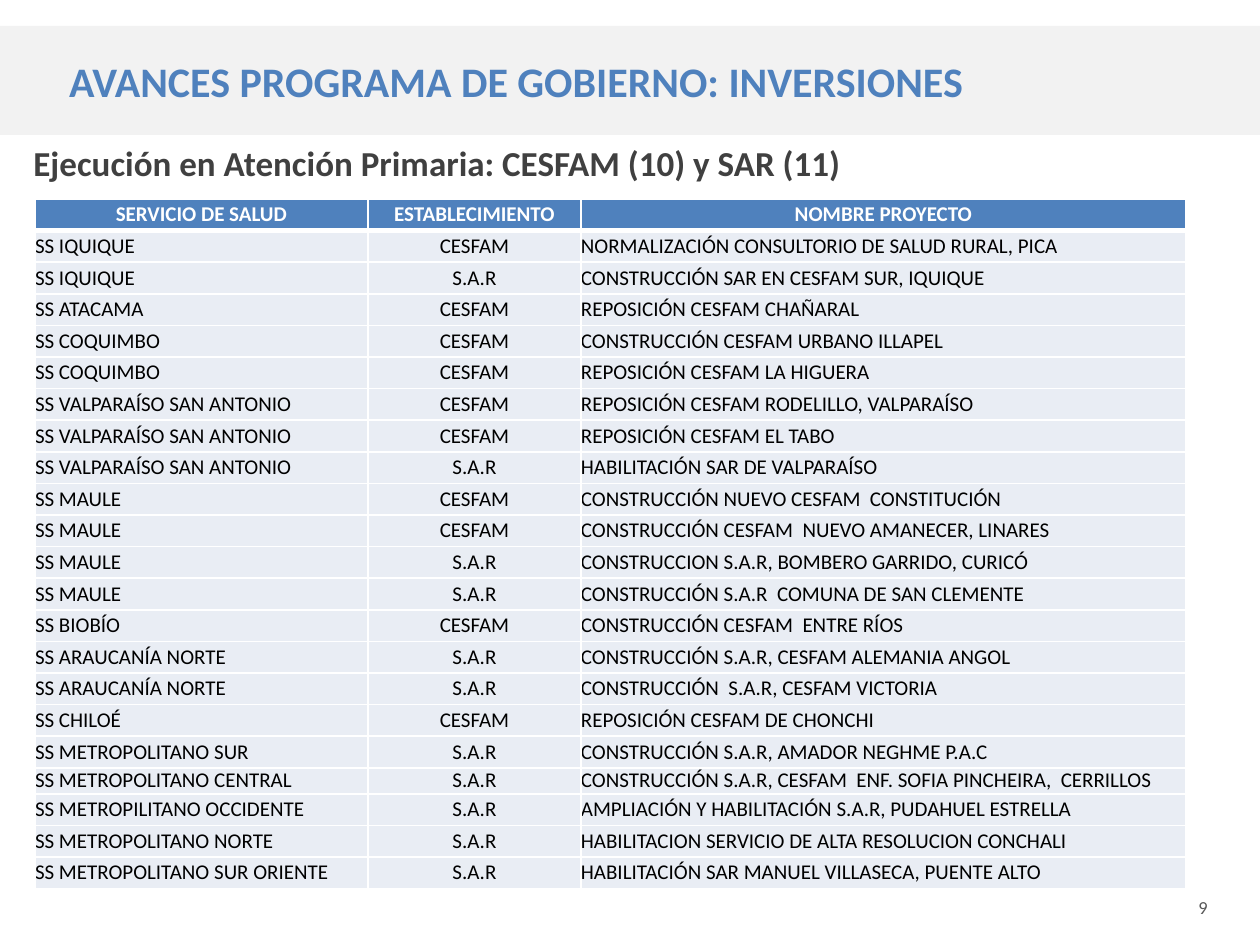
import pptx
import pptx.util
import pptx.dml.color
import pptx.enum.text
import pptx.oxml
import pptx.oxml.ns

SCALE = 914400 / 126
HEX = {
    "band": "F2F2F2", "blue": "4F81BD", "dark": "404040", "gray": "595959",
    "row": "E9EDF4", "black": "000000", "white": "FFFFFF",
}
HEAD = ("SERVICIO DE SALUD", "ESTABLECIMIENTO", "NOMBRE PROYECTO")
WORKS = [
    ("SS IQUIQUE", "CESFAM", "NORMALIZACIÓN CONSULTORIO DE SALUD RURAL, PICA"),
    ("SS IQUIQUE", "S.A.R", "CONSTRUCCIÓN SAR EN CESFAM SUR, IQUIQUE"),
    ("SS ATACAMA", "CESFAM", "REPOSICIÓN CESFAM CHAÑARAL"),
    ("SS COQUIMBO", "CESFAM", "CONSTRUCCIÓN CESFAM URBANO ILLAPEL"),
    ("SS COQUIMBO", "CESFAM", "REPOSICIÓN CESFAM LA HIGUERA"),
    ("SS VALPARAÍSO SAN ANTONIO", "CESFAM", "REPOSICIÓN CESFAM RODELILLO, VALPARAÍSO"),
    ("SS VALPARAÍSO SAN ANTONIO", "CESFAM", "REPOSICIÓN CESFAM EL TABO"),
    ("SS VALPARAÍSO SAN ANTONIO", "S.A.R", "HABILITACIÓN SAR DE VALPARAÍSO"),
    ("SS MAULE", "CESFAM", "CONSTRUCCIÓN NUEVO CESFAM  CONSTITUCIÓN"),
    ("SS MAULE", "CESFAM", "CONSTRUCCIÓN CESFAM  NUEVO AMANECER, LINARES"),
    ("SS MAULE", "S.A.R", "CONSTRUCCION S.A.R, BOMBERO GARRIDO, CURICÓ"),
    ("SS MAULE", "S.A.R", "CONSTRUCCIÓN S.A.R  COMUNA DE SAN CLEMENTE"),
    ("SS BIOBÍO", "CESFAM", "CONSTRUCCIÓN CESFAM  ENTRE RÍOS"),
    ("SS ARAUCANÍA NORTE", "S.A.R", "CONSTRUCCIÓN S.A.R, CESFAM ALEMANIA ANGOL"),
    ("SS ARAUCANÍA NORTE", "S.A.R", "CONSTRUCCIÓN  S.A.R, CESFAM VICTORIA"),
    ("SS CHILOÉ", "CESFAM", "REPOSICIÓN CESFAM DE CHONCHI"),
    ("SS METROPOLITANO SUR", "S.A.R", "CONSTRUCCIÓN S.A.R, AMADOR NEGHME P.A.C"),
    ("SS METROPOLITANO CENTRAL", "S.A.R",
     "CONSTRUCCIÓN S.A.R, CESFAM  ENF. SOFIA PINCHEIRA,  CERRILLOS"),
    ("SS METROPILITANO OCCIDENTE", "S.A.R",
     "AMPLIACIÓN Y HABILITACIÓN S.A.R, PUDAHUEL ESTRELLA"),
    ("SS METROPOLITANO NORTE", "S.A.R",
     "HABILITACION SERVICIO DE ALTA RESOLUCION CONCHALI"),
    ("SS METROPOLITANO SUR ORIENTE", "S.A.R",
     "HABILITACIÓN SAR MANUEL VILLASECA, PUENTE ALTO"),
]
WIDTHS = (333, 213, 605)
TALL, SHORT, TIGHT = 690, 26, 18  # table height, height and index of the low row


def px(num):
    """Turn px into EMU."""
    return pptx.util.Emu(round(num * SCALE))


def write(frame, text, size, color, bold=False, align="LEFT"):
    frame.text = text
    para = frame.paragraphs[0]
    para.alignment = getattr(pptx.enum.text.PP_ALIGN, align)
    font = para.runs[0].font
    font.name = "Calibri"
    font.size = pptx.util.Pt(size)
    font.bold = bold
    font.color.rgb = pptx.dml.color.RGBColor.from_string(HEX[color])


deck = pptx.Presentation()
deck.slide_width, deck.slide_height = px(1260), px(945)
slide = deck.slides.add_slide(deck.slide_layouts[5])
middle = pptx.enum.text.MSO_ANCHOR.MIDDLE

# Title band
title = slide.shapes.title
title.left, title.top, title.width, title.height = px(0), px(26), px(1260), px(109)
title.fill.solid()
title.fill.fore_color.rgb = pptx.dml.color.RGBColor.from_string(HEX["band"])
frame = title.text_frame
frame.auto_size = pptx.enum.text.MSO_AUTO_SIZE.NONE
frame.vertical_anchor = middle
frame.margin_left = px(69)
write(frame, "AVANCES PROGRAMA DE GOBIERNO: INVERSIONES", 24, "blue", True)

# Subtitle and page number
sub = slide.shapes.add_textbox(px(21), px(135), px(1193), px(64))
sub.text_frame.word_wrap = True
write(sub.text_frame, "Ejecución en Atención Primaria: CESFAM (10) y SAR (11)",
      20, "dark", True)
page = slide.shapes.add_textbox(px(1186), px(890), px(60), px(37))
write(page.text_frame, "9", 10.5, "gray")

# Table of works
rows = [HEAD] + WORKS
table = slide.shapes.add_table(
    len(rows), len(HEAD), px(35), px(199), px(sum(WIDTHS)), px(TALL)).table
for col, width in zip(table.columns, WIDTHS):
    col.width = px(width)
for r, texts in enumerate(rows):
    head = r == 0
    table.rows[r].height = px(
        SHORT if r == TIGHT else (TALL - SHORT) / (len(rows) - 1))
    for c, text in enumerate(texts):
        cell = table.cell(r, c)
        cell.margin_left = cell.margin_right = 0
        cell.margin_top = cell.margin_bottom = 0
        cell.vertical_anchor = middle
        write(cell.text_frame, text, 12, "white" if head else "black", head,
              "CENTER" if head or c == 1 else "LEFT")
        props = cell._tc.get_or_add_tcPr()
        for side in "LRTB":
            thick = (head and side == "B") or (r == 1 and side == "T")
            props.append(pptx.oxml.parse_xml(
                f'<a:ln{side} {pptx.oxml.ns.nsdecls("a")} w="{38100 if thick else 12700}">'
                f'<a:solidFill><a:srgbClr val="{HEX["white"]}"/></a:solidFill></a:ln{side}>'))
        cell.fill.solid()
        cell.fill.fore_color.rgb = pptx.dml.color.RGBColor.from_string(
            HEX["blue" if head else "row"])

deck.save("out.pptx")
